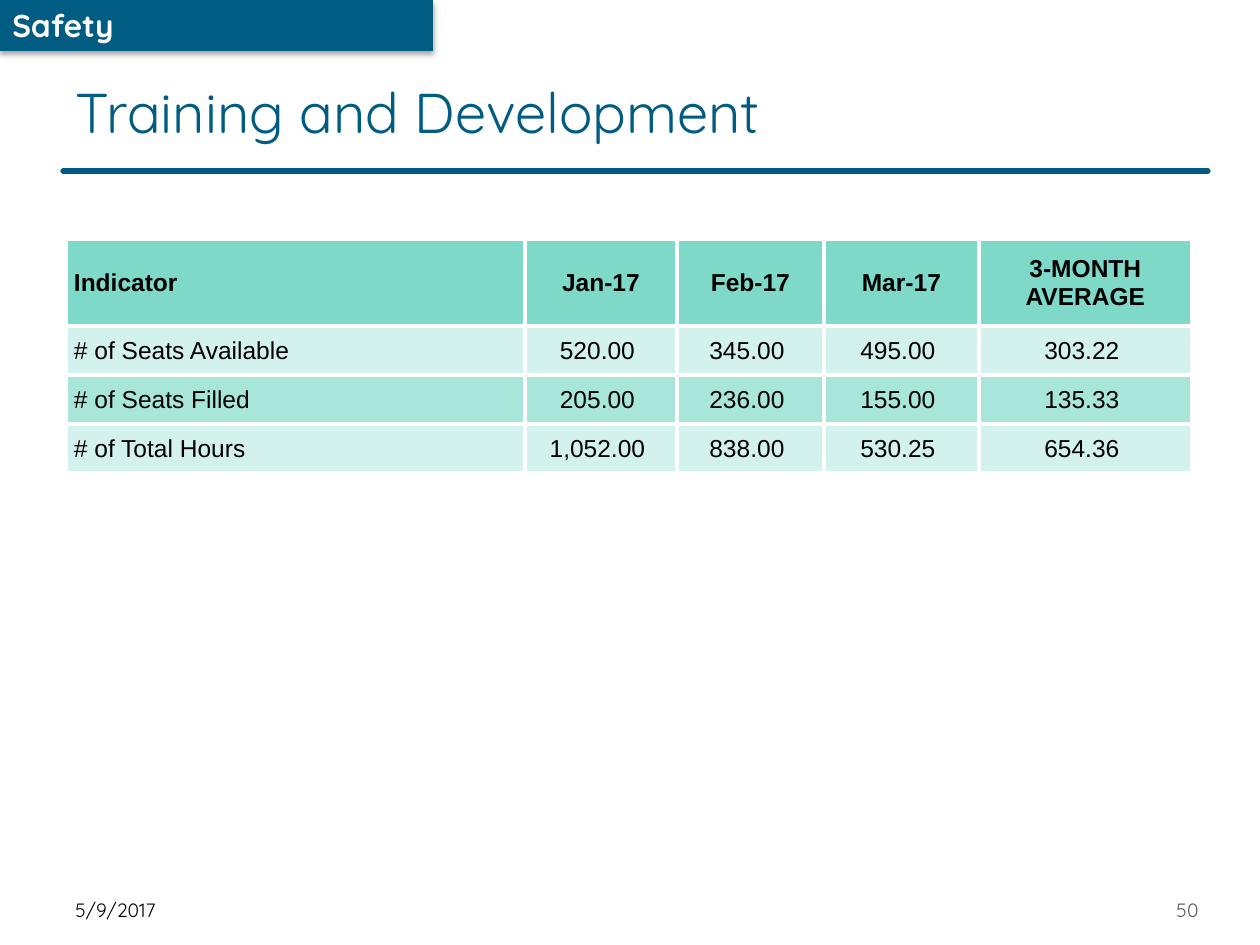
from lxml.etree import SubElement
from pptx import Presentation
from pptx.dml.color import RGBColor
from pptx.enum.shapes import MSO_CONNECTOR, MSO_SHAPE
from pptx.enum.text import MSO_ANCHOR as Anchor, MSO_AUTO_SIZE as AutoSize, PP_ALIGN as Align
from pptx.oxml.ns import qn
from pptx.util import Emu, Pt

EMU_PER_PX = 914400 / 126
BLUE = RGBColor(0x00, 0x5C, 0x82)
WHITE = RGBColor(0xFF, 0xFF, 0xFF)
BLACK = RGBColor(0x00, 0x00, 0x00)
GRAY = RGBColor(0x59, 0x59, 0x59)
HEADER_GREEN = RGBColor(0x7F, 0xD9, 0xC8)
BAND_GREENS = (RGBColor(0xD4, 0xF2, 0xED), RGBColor(0xA9, 0xE6, 0xDA))

COLUMN_WIDTHS = (459, 152, 147, 155, 213)
ROW_HEIGHTS = (87, 49, 49, 49)
TRAINING_ROWS = (
    ("Indicator", "Jan-17", "Feb-17", "Mar-17", "3-MONTH AVERAGE"),
    ("# of Seats Available", "520.00", "345.00", "495.00", "303.22"),
    ("# of Seats Filled", "205.00", "236.00", "155.00", "135.33"),
    ("# of Total Hours", "1,052.00", "838.00", "530.25", "654.36"),
)


def px(value):
    return Emu(round(value * EMU_PER_PX))


def write_text(frame, text, size=11, font="Quicksand", color=BLACK, bold=False, align=Align.LEFT):
    frame.word_wrap = True
    paragraph = frame.paragraphs[0]
    paragraph.alignment = align
    run = paragraph.add_run()
    run.text = text
    run.font.size = Pt(size)
    run.font.name = font
    run.font.bold = bold
    run.font.color.rgb = color


class SlideBuilder:
    def __init__(self, slide, accent=BLUE, table_font="Arial"):
        self.slide = slide
        self.accent = accent
        self.table_font = table_font

    def title(self, text, left, top, width, height):
        shape = self.slide.shapes.title
        shape.left, shape.top, shape.width, shape.height = map(px, (left, top, width, height))
        shape.text_frame.vertical_anchor = Anchor.MIDDLE
        write_text(shape.text_frame, text, size=32, color=self.accent)

    def text_box(self, text, left, top, width, height, anchor=Anchor.MIDDLE, grow=False, **style):
        shape = self.slide.shapes.add_textbox(*map(px, (left, top, width, height)))
        frame = shape.text_frame
        frame.vertical_anchor = anchor
        frame.auto_size = AutoSize.SHAPE_TO_FIT_TEXT if grow else AutoSize.NONE
        write_text(frame, text, **style)

    def banner(self, left, top, width, height):
        shape = self.slide.shapes.add_shape(MSO_SHAPE.RECTANGLE, *map(px, (left, top, width, height)))
        shape.fill.solid()
        shape.fill.fore_color.rgb = self.accent
        shape.line.fill.background()
        shape.shadow.inherit = False
        effects = shape._element.spPr.find(qn("a:effectLst"))
        shadow = SubElement(effects, qn("a:outerShdw"), blurRad=str(Pt(3.1)), dist=str(Pt(1.8)),
                            dir="5400000", algn="t", rotWithShape="0")
        shade = SubElement(shadow, qn("a:srgbClr"), val=str(BLACK))
        SubElement(shade, qn("a:alpha"), val="35000")

    def rule(self, left, right, y):
        line = self.slide.shapes.add_connector(MSO_CONNECTOR.STRAIGHT, *map(px, (left, y, right, y)))
        line.line.color.rgb = self.accent
        line.line.width = Pt(3)
        line.line._ln.set("cap", "rnd")
        SubElement(line._element.spPr, qn("a:effectLst"))

    def cell(self, cell, text, fill, bold, align, left=1, right=1):
        cell.margin_left, cell.margin_top, cell.margin_right, cell.margin_bottom = map(px, (left, 1, right, 0))
        cell.vertical_anchor = Anchor.MIDDLE
        # Borders come before the fill in the cell properties
        properties = cell._tc.get_or_add_tcPr()
        for side in ("lnL", "lnR", "lnT", "lnB"):
            border = SubElement(properties, qn("a:" + side), w=str(Pt(2.25)))
            paint = SubElement(border, qn("a:solidFill"))
            SubElement(paint, qn("a:srgbClr"), val=str(WHITE))
        cell.fill.solid()
        cell.fill.fore_color.rgb = fill
        write_text(cell.text_frame, text, size=14, font=self.table_font, bold=bold, align=align)

    def table(self, rows, left, top, widths, heights):
        frame = self.slide.shapes.add_table(len(rows), len(widths), px(left), px(top),
                                            px(sum(widths)), px(sum(heights)))
        table = frame.table
        table.horz_banding = False
        for column, width in zip(table.columns, widths):
            column.width = px(width)
        for row, height in zip(table.rows, heights):
            row.height = px(height)
        for i, row in enumerate(rows):
            header = i == 0
            fill = HEADER_GREEN if header else BAND_GREENS[(i - 1) % 2]
            for j, text in enumerate(row):
                label = j == 0
                self.cell(table.cell(i, j), text, fill, bold=header,
                          align=Align.LEFT if label else Align.CENTER,
                          left=8 if label else 1,
                          right=1 if header or label else 8)


def main():
    presentation = Presentation()
    presentation.slide_width, presentation.slide_height = px(1260), px(945)
    builder = SlideBuilder(presentation.slides.add_slide(presentation.slide_layouts[5]))

    # Footer
    builder.text_box("5/9/2017", 63, 896, 248, 27)
    builder.text_box("50", 1105, 896, 106, 27, color=GRAY, align=Align.RIGHT)

    # Section banner and heading
    builder.banner(0, 0, 433, 51)
    builder.rule(63, 1208, 171)
    builder.title("Training and Development", 63, 54, 974, 114)
    builder.text_box("Safety", 0, 0, 432, 51, anchor=Anchor.TOP, grow=True,
                     size=18, color=WHITE, bold=True)

    # Training indicators
    builder.table(TRAINING_ROWS, 66, 239, COLUMN_WIDTHS, ROW_HEIGHTS)

    presentation.save("out.pptx")


if __name__ == "__main__":
    main()
